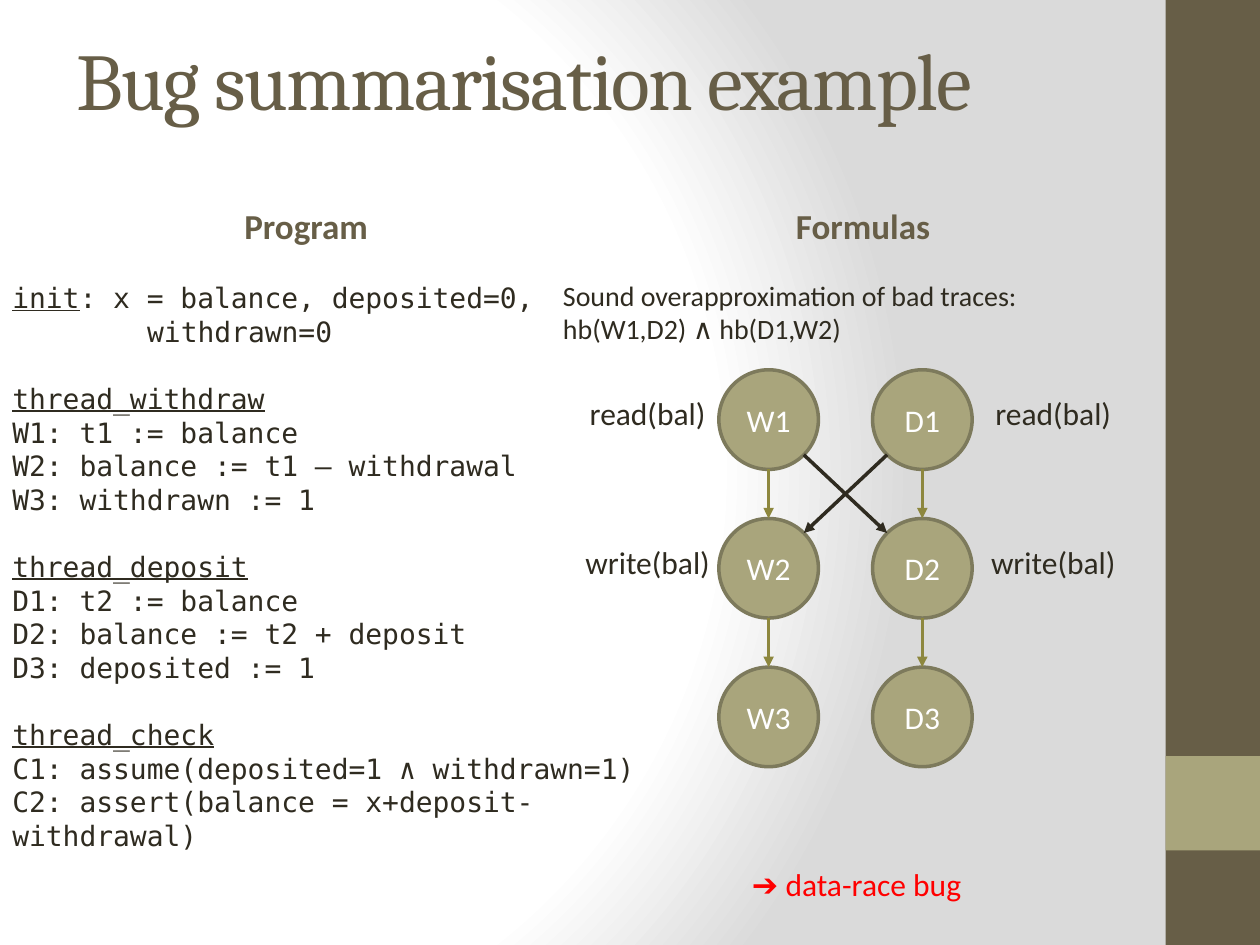
from dataclasses import dataclass
from math import cos, pi

from lxml.etree import SubElement
from pptx import Presentation
from pptx.dml.color import RGBColor
from pptx.enum.shapes import MSO_CONNECTOR, MSO_SHAPE
from pptx.enum.text import MSO_ANCHOR, PP_ALIGN
from pptx.oxml import parse_xml
from pptx.oxml.ns import nsdecls, qn
from pptx.util import Inches, Pt


@dataclass(frozen=True)
class Theme:
    brown: str = "675E47"
    olive: str = "A9A57C"
    olive_edge: str = "7D7A5C"
    olive_arrow: str = "8D873E"
    ink: str = "2F2B20"
    white: str = "FFFFFF"
    grey: str = "DADADA"
    alert: str = "FF0000"
    title_font: str = "Cambria"
    body_font: str = "Calibri"
    code_font: str = "DejaVu Sans Mono"
    title_size: int = 46
    heading_size: int = 20
    label_size: int = 18
    text_size: int = 16
    line_width: int = 2


THEME = Theme()

INIT = ("init", ": x = balance, deposited=0,")
INIT_CONTINUED = "withdrawn=0"
THREADS = {
    "thread_withdraw": ["W1: t1 := balance", "W2: balance := t1 – withdrawal", "W3: withdrawn := 1"],
    "thread_deposit": ["D1: t2 := balance", "D2: balance := t2 + deposit", "D3: deposited := 1"],
    "thread_check": ["C1: assume(deposited=1 ∧ withdrawn=1)", "C2: assert(balance = x+deposit-withdrawal)"],
}

NODE_SIZE = 0.79
COLUMNS = {"W": 6.1, "D": 7.32}
FIRST_ROW = 3.33
ROW_STEP = 1.18


def style(paragraph, size, color, name=THEME.body_font, align=PP_ALIGN.LEFT):
    paragraph.alignment = align
    font = paragraph.font
    font.size, font.name = Pt(size), name
    font.color.rgb = RGBColor.from_string(color)


def set_background(slide):
    """Radial gradient from white on the left to grey on the right."""
    stops = "".join(
        f'<a:gs pos="{position}"><a:srgbClr val="{color}"/></a:gs>'
        for position, color in ((0, THEME.white), (75000, THEME.white), (100000, THEME.grey))
    )
    background = parse_xml(
        f'<p:bg {nsdecls("p", "a")}><p:bgPr><a:gradFill rotWithShape="1"><a:gsLst>{stops}</a:gsLst>'
        '<a:path path="circle"><a:fillToRect l="20000" t="50000" r="100000" b="50000"/></a:path>'
        "</a:gradFill><a:effectLst/></p:bgPr></p:bg>"
    )
    slide.element.cSld.insert(0, background)


def add_filled_shape(slide, kind, left, top, width, height, fill):
    shape = slide.shapes.add_shape(kind, Inches(left), Inches(top), Inches(width), Inches(height))
    shape.shadow.inherit = False
    shape.fill.solid()
    shape.fill.fore_color.rgb = RGBColor.from_string(fill)
    shape.line.fill.background()
    return shape


def set_title(slide, text):
    title = slide.shapes.title
    title.left, title.top, title.width, title.height = Inches(0.51), 0, Inches(8.33), Inches(1.25)
    title.text_frame.vertical_anchor = MSO_ANCHOR.MIDDLE
    paragraph = title.text_frame.paragraphs[0]
    run = paragraph.add_run()
    run.text = text
    style(paragraph, THEME.title_size, THEME.brown, THEME.title_font)
    run.font._element.set("spc", "-100")


def add_text(slide, lines, left, top, width, height, size, color=THEME.ink, align=PP_ALIGN.LEFT):
    box = slide.shapes.add_textbox(Inches(left), Inches(top), Inches(width), Inches(height))
    frame = box.text_frame
    frame.word_wrap = True
    frame.text = "\n".join(lines)
    for paragraph in frame.paragraphs:
        style(paragraph, size, color, align=align)
    return frame


def add_heading(slide, text, left):
    frame = add_text(slide, [text], left, 1.31, 4, 0.7, THEME.heading_size, THEME.brown, PP_ALIGN.CENTER)
    frame.vertical_anchor = MSO_ANCHOR.BOTTOM
    frame.paragraphs[0].font.bold = True


def add_program(slide):
    lines = ["".join(INIT), INIT_CONTINUED]
    for thread, statements in THREADS.items():
        lines += [thread, *statements]
    frame = add_text(slide, lines, 0, 2.18, 5.36, 4.41, THEME.text_size)
    for paragraph in frame.paragraphs:
        paragraph.font.name = THEME.code_font
        if paragraph.text in THREADS:
            paragraph.space_before = Pt(19.2)
            paragraph.runs[0].font.underline = True
    first, continued = frame.paragraphs[:2]
    first.runs[0].text = INIT[0]
    first.runs[0].font.underline = True
    first.add_run().text = INIT[1]
    continued._p.get_or_add_pPr().set("marL", str(Inches(1.07)))


def row_center(row):
    return FIRST_ROW + ROW_STEP * (row - 1)


def add_node(slide, thread, row):
    half = NODE_SIZE / 2
    node = add_filled_shape(slide, MSO_SHAPE.OVAL, COLUMNS[thread] - half, row_center(row) - half,
                            NODE_SIZE, NODE_SIZE, THEME.olive)
    node.line.color.rgb = RGBColor.from_string(THEME.olive_edge)
    node.line.width = Pt(THEME.line_width)
    frame = node.text_frame
    frame.text = f"{thread}{row}"
    frame.vertical_anchor = MSO_ANCHOR.MIDDLE
    style(frame.paragraphs[0], THEME.label_size, THEME.white, align=PP_ALIGN.CENTER)


def add_arrow(slide, start, end, color):
    arrow = slide.shapes.add_connector(MSO_CONNECTOR.STRAIGHT, *map(Inches, (*start, *end)))
    arrow.line.color.rgb = RGBColor.from_string(color)
    arrow.line.width = Pt(THEME.line_width)
    SubElement(arrow.line._get_or_add_ln(), qn("a:tailEnd"), type="triangle")
    SubElement(arrow._element.spPr, qn("a:effectLst"))


def add_graph(slide):
    half = NODE_SIZE / 2
    for row in (1, 2, 3):
        for thread in COLUMNS:
            add_node(slide, thread, row)

    diagonal = half * cos(pi / 4)
    left, right = COLUMNS["W"] + diagonal, COLUMNS["D"] - diagonal
    top, bottom = row_center(1) + diagonal, row_center(2) - diagonal
    for start, end in ((left, right), (right, left)):
        add_arrow(slide, (start, top), (end, bottom), THEME.ink)

    for x in COLUMNS.values():
        for row in (1, 2):
            add_arrow(slide, (x, row_center(row) + half), (x, row_center(row + 1) - half), THEME.olive_arrow)

    for left in (4.54, 7.76):
        for row, label in enumerate(("read(bal)", "write(bal)"), start=1):
            add_text(slide, [label], left, row_center(row) - 0.25, 1.2, 0.4,
                     THEME.label_size, align=PP_ALIGN.CENTER)


def main():
    presentation = Presentation()
    presentation.slide_width, presentation.slide_height = Inches(10), Inches(7.5)
    slide = presentation.slides.add_slide(presentation.slide_layouts[5])
    set_background(slide)
    add_filled_shape(slide, MSO_SHAPE.RECTANGLE, 9.25, 0, 0.75, 7.5, THEME.brown)
    add_filled_shape(slide, MSO_SHAPE.RECTANGLE, 9.25, 6, 0.75, 0.75, THEME.olive)
    set_title(slide, "Bug summarisation example")
    add_heading(slide, "Program", 0.43)
    add_heading(slide, "Formulas", 4.85)
    add_program(slide)
    add_text(slide, ["Sound overapproximation of bad traces:", "hb(W1,D2) ∧ hb(D1,W2)"],
             4.37, 2.16, 4.96, 0.91, THEME.text_size)
    add_graph(slide)
    add_text(slide, ["➔ data-race bug"], 5.87, 6.82, 1.94, 0.4, THEME.label_size, THEME.alert)
    presentation.save("out.pptx")


if __name__ == "__main__":
    main()
